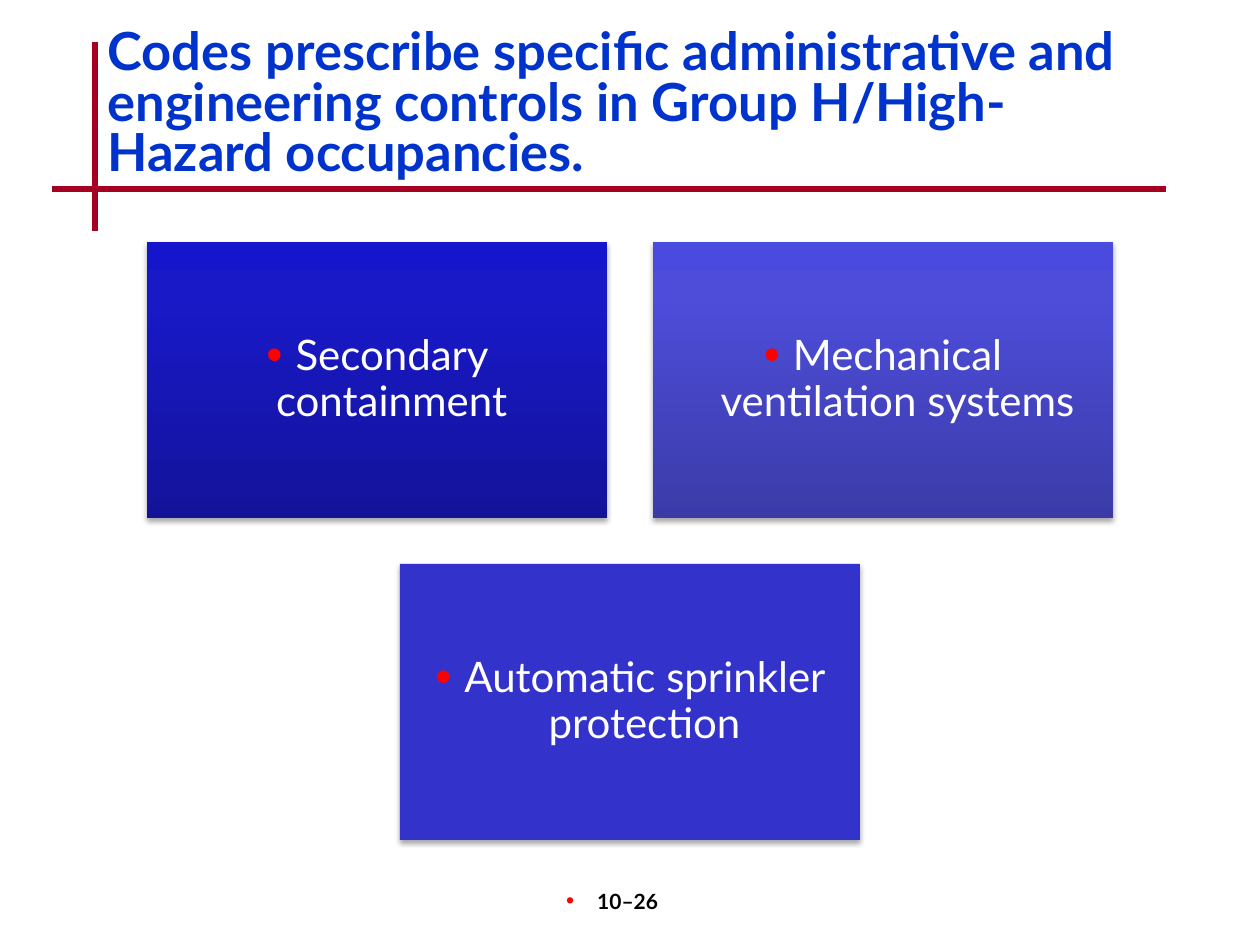
from dataclasses import dataclass

from lxml.etree import SubElement
from pptx import Presentation
from pptx.dml.color import RGBColor
from pptx.enum.shapes import MSO_CONNECTOR as Connector, MSO_SHAPE as Shape
from pptx.enum.text import MSO_ANCHOR as Anchor, MSO_AUTO_SIZE as AutoSize, PP_ALIGN as Align
from pptx.oxml.ns import qn
from pptx.util import Emu, Pt

PX_PER_INCH = 126
FONT = "Lato"
COLORS = {
    "title": "0033CC",
    "rule": "A50021",
    "bullet": "FF0000",
    "card_text": "FFFFFF",
    "page_number": "000000",
    "shadow": "000000",
}

CARD_WIDTH, CARD_HEIGHT, GAP = 460, 276, 46
GRID_LEFT, GRID_TOP = 147, 242
STEP_X, STEP_Y = CARD_WIDTH + GAP, CARD_HEIGHT + GAP


@dataclass(frozen=True)
class Card:
    text: str
    column: float
    row: int
    fill: tuple[tuple[int, str], ...]  # (percent, colour) from bottom to top


@dataclass(frozen=True)
class Rule:
    x1: int
    y1: int
    x2: int
    y2: int


CARDS = [
    Card("Secondary containment", 0, 0, ((0, "13139A"), (80, "1919C8"), (100, "1515CC"))),
    Card("Mechanical ventilation systems", 1, 0, ((0, "3B3BA8"), (80, "4D4DDA"), (100, "4A4ADE"))),
    Card("Automatic sprinkler protection", 0.5, 1, ((0, "3333CC"),)),
]
RULES = [Rule(95, 42, 95, 231), Rule(52, 189, 1166, 189)]


def px(value: float) -> Emu:
    return Emu(round(value * 914400 / PX_PER_INCH))


def rgb(name: str) -> RGBColor:
    return RGBColor.from_string(COLORS[name])


def add_bullet(paragraph, indent: int) -> None:
    properties = paragraph._p.get_or_add_pPr()
    properties.set("marL", str(px(indent)))
    properties.set("indent", str(-px(indent)))
    color = SubElement(properties, qn("a:buClr"))
    SubElement(color, qn("a:srgbClr"), val=COLORS["bullet"])
    SubElement(properties, qn("a:buSzPct"), val="110000")
    SubElement(properties, qn("a:buFont"), typeface="Arial")
    SubElement(properties, qn("a:buChar"), char="•")


def write_text(shape, text: str, *, size: int, color: str, bold: bool = False,
               align: Align = Align.CENTER, anchor: Anchor = Anchor.TOP,
               line_spacing: float = 1.0, bullet_indent: int = 0) -> None:
    frame = shape.text_frame
    frame.word_wrap = True
    frame.auto_size = AutoSize.NONE
    frame.vertical_anchor = anchor
    paragraph = frame.paragraphs[0]
    if bullet_indent:
        add_bullet(paragraph, bullet_indent)
    paragraph.alignment = align
    paragraph.line_spacing = line_spacing
    run = paragraph.add_run()
    run.text = text
    run.font.name = FONT
    run.font.size = Pt(size)
    run.font.bold = bold
    run.font.color.rgb = rgb(color)


def add_rule(slide, rule: Rule) -> None:
    line = slide.shapes.add_connector(
        Connector.STRAIGHT, px(rule.x1), px(rule.y1), px(rule.x2), px(rule.y2))
    line.line.color.rgb = rgb("rule")
    line.line.width = Pt(3)
    SubElement(line._element.spPr, qn("a:effectLst"))


def fill_card(shape, stops: tuple[tuple[int, str], ...]) -> None:
    if len(stops) == 1:
        shape.fill.solid()
        shape.fill.fore_color.rgb = RGBColor.from_string(stops[0][1])
        return
    shape.fill.gradient()
    shape.fill.gradient_angle = 90
    stop_list = shape._element.spPr.find(".//" + qn("a:gsLst"))
    for stop in list(stop_list):
        stop_list.remove(stop)
    for percent, color in stops:
        stop = SubElement(stop_list, qn("a:gs"), pos=str(percent * 1000))
        SubElement(stop, qn("a:srgbClr"), val=color)


def add_soft_shadow(shape) -> None:
    shape.shadow.inherit = False
    effects = shape._element.spPr.find(qn("a:effectLst"))
    shadow = SubElement(effects, qn("a:outerShdw"), blurRad=str(Pt(3.1)), dist=str(Pt(1.8)),
                        dir="5400000", rotWithShape="0")
    color = SubElement(shadow, qn("a:srgbClr"), val=COLORS["shadow"])
    SubElement(color, qn("a:alpha"), val="35000")


def add_card(slide, card: Card) -> None:
    shape = slide.shapes.add_shape(
        Shape.RECTANGLE, px(GRID_LEFT + card.column * STEP_X), px(GRID_TOP + card.row * STEP_Y),
        px(CARD_WIDTH), px(CARD_HEIGHT))
    fill_card(shape, card.fill)
    shape.line.fill.background()
    add_soft_shadow(shape)
    frame = shape.text_frame
    frame.margin_left = frame.margin_right = frame.margin_top = frame.margin_bottom = px(13)
    write_text(shape, card.text, size=24, color="card_text", anchor=Anchor.MIDDLE,
               line_spacing=0.9, bullet_indent=29)


def add_page_number(slide, text: str) -> None:
    box = slide.shapes.add_textbox(px(494), px(882), px(262), px(63))
    box.text_frame.margin_right = px(38)
    write_text(box, text, size=12, color="page_number", bold=True, bullet_indent=31)


def set_title(slide, text: str) -> None:
    title = slide.shapes.title
    title.left, title.top, title.width, title.height = px(95), px(24), px(1071), px(147)
    write_text(title, text, size=30, color="title", bold=True, align=Align.LEFT,
               line_spacing=0.8)


def main() -> None:
    presentation = Presentation()
    presentation.slide_width, presentation.slide_height = px(1260), px(945)
    slide = presentation.slides.add_slide(presentation.slide_layouts[5])
    for rule in RULES:
        add_rule(slide, rule)
    add_page_number(slide, "10–26")
    set_title(slide, "Codes prescribe specific administrative and engineering controls "
                     "in Group H/High-Hazard occupancies.")
    for card in CARDS:
        add_card(slide, card)
    presentation.save("out.pptx")


if __name__ == "__main__":
    main()
